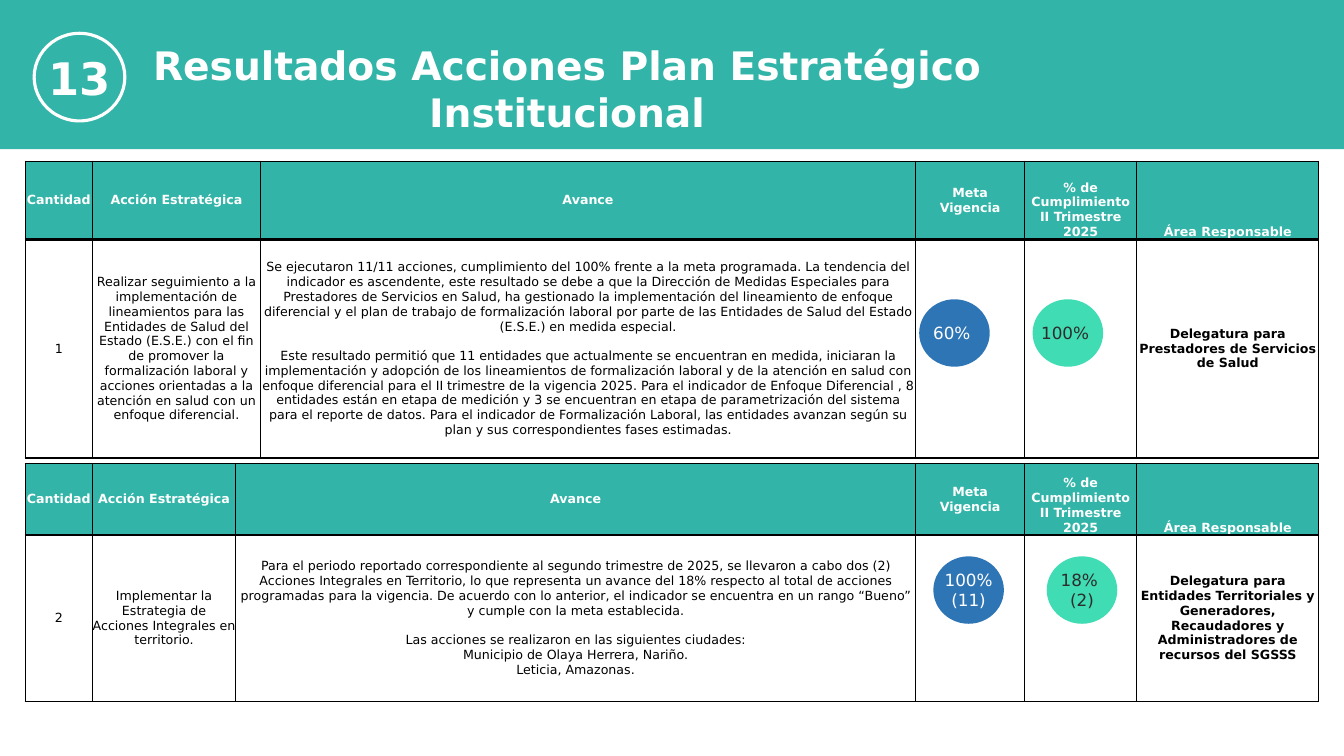
from dataclasses import dataclass

from lxml import etree
from pptx import Presentation
from pptx.dml.color import RGBColor
from pptx.enum.shapes import MSO_SHAPE
from pptx.enum.text import MSO_ANCHOR, MSO_AUTO_SIZE, PP_ALIGN
from pptx.oxml.ns import qn
from pptx.util import Pt

OVAL, RECTANGLE = MSO_SHAPE.OVAL, MSO_SHAPE.RECTANGLE
TOP, MIDDLE, BOTTOM = MSO_ANCHOR.TOP, MSO_ANCHOR.MIDDLE, MSO_ANCHOR.BOTTOM
CENTER = PP_ALIGN.CENTER
NO_AUTOFIT = MSO_AUTO_SIZE.NONE
TITLE_ONLY_LAYOUT = 5


@dataclass(frozen=True)
class Theme:
    """Colours, font and type sizes of the slide."""
    teal: str = "32B4A8"
    blue: str = "2E75B6"
    mint: str = "40DCB3"
    white: str = "FFFFFF"
    black: str = "000000"
    charcoal: str = "2D2D2D"
    font: str = "DejaVu Sans"
    title_size: float = 28
    badge_size: float = 32
    circle_size: float = 12
    table_size: float = 9
    table_gap: float = 10.5


THEME = Theme()

HEADINGS = [
    ("Cantidad", MIDDLE),
    ("Acción Estratégica", MIDDLE),
    ("Avance", MIDDLE),
    ("Meta\nVigencia", MIDDLE),
    ("% de Cumplimiento II Trimestre 2025", BOTTOM),
    ("Área Responsable", BOTTOM),
]

ACTIONS = [
    {
        "box": (18, 115.2, 924, 212),
        "header_height": 56,
        "columns": (48, 120, 468, 78, 80, 130),
        "cells": (
            "1",
            "Realizar seguimiento a la implementación de lineamientos para las Entidades de Salud "
            "del Estado (E.S.E.) con el fin de promover la formalización laboral y acciones "
            "orientadas a la atención en salud con un enfoque diferencial.",
            "\n\n".join((
                "Se ejecutaron 11/11 acciones, cumplimiento del 100% frente a la meta programada. "
                "La tendencia del indicador es ascendente, este resultado se debe a que la "
                "Dirección de Medidas Especiales para Prestadores de Servicios en Salud, ha "
                "gestionado la implementación del lineamiento de enfoque diferencial y el plan de "
                "trabajo de formalización laboral por parte de las Entidades de Salud del Estado "
                "(E.S.E.) en medida especial.",
                "Este resultado permitió que 11 entidades que actualmente se encuentran en medida, "
                "iniciaran la implementación y adopción de los lineamientos de formalización "
                "laboral y de la atención en salud con enfoque diferencial para el II trimestre "
                "de la vigencia 2025. Para el indicador de Enfoque Diferencial , 8 entidades están "
                "en etapa de medición y 3 se encuentran en etapa de parametrización del sistema "
                "para el reporte de datos. Para el indicador de Formalización Laboral, las "
                "entidades avanzan según su plan y sus correspondientes fases estimadas.",
            )),
            "",
            "",
            "Delegatura para Prestadores de Servicios de Salud",
        ),
        "circles_offset": (638.6, 98.6),
        "goal": "60% ",
        "result": "100% ",
    },
    {
        "box": (18, 331.2, 924, 170),
        "header_height": 51,
        "columns": (48, 102.3, 485.7, 78, 80, 130),
        "cells": (
            "2",
            "Implementar la Estrategia de Acciones Integrales en territorio.",
            "Para el periodo reportado correspondiente al segundo trimestre de 2025, se llevaron a "
            "cabo dos (2) Acciones Integrales en Territorio, lo que representa un avance del 18% "
            "respecto al total de acciones programadas para la vigencia. De acuerdo con lo "
            "anterior, el indicador se encuentra en un rango “Bueno” y cumple con la meta "
            "establecida.\n\n"
            "Las acciones se realizaron en las siguientes ciudades:\n"
            "Municipio de Olaya Herrera, Nariño.\n"
            "Leticia, Amazonas.",
            "",
            "",
            "Delegatura para Entidades Territoriales y Generadores, Recaudadores y "
            "Administradores de recursos del SGSSS",
        ),
        "circles_offset": (648.7, 66.2),
        "goal": "100%\n(11)",
        "result": "18% \n(2)",
    },
]


def write_text(frame, text, *, size, color, bold=False, gap=0):
    """Write centred lines; an empty line in the text becomes a gap before the next one."""
    after_gap = False
    paragraph = None
    for line in text.split("\n"):
        if not line:
            after_gap = True
            continue
        paragraph = frame.paragraphs[0] if paragraph is None else frame.add_paragraph()
        paragraph.alignment = CENTER
        if after_gap:
            paragraph.space_before = Pt(gap)
            after_gap = False
        run = paragraph.add_run()
        run.text = line
        run.font.name = THEME.font
        run.font.size = Pt(size)
        run.font.bold = bold
        run.font.color.rgb = RGBColor.from_string(color)


def add_plain_shape(slide, kind, box, fill=None):
    """Add a preset shape without shadow or line, filled only when a colour is given."""
    shape = slide.shapes.add_shape(kind, *map(Pt, box))
    shape.shadow.inherit = False
    shape.line.fill.background()
    if fill:
        shape.fill.solid()
        shape.fill.fore_color.rgb = RGBColor.from_string(fill)
    else:
        shape.fill.background()
    return shape


def add_circle(slide, box, text, *, fill=None, size, color, bold=False):
    """Add an ellipse with text in its middle."""
    circle = add_plain_shape(slide, OVAL, box, fill)
    frame = circle.text_frame
    frame.word_wrap = False
    frame.vertical_anchor = MIDDLE
    frame.margin_left = frame.margin_right = frame.margin_top = frame.margin_bottom = 0
    write_text(frame, text, size=size, color=color, bold=bold)
    return circle


def add_header(slide, box, number, text):
    """Place the coloured band, the title and the numbered badge."""
    left, top, width, height = box
    band = add_plain_shape(slide, RECTANGLE, box, THEME.teal)
    title = slide.shapes.title
    title._element.addprevious(band._element)
    title.left, title.top = Pt(left + 72), Pt(top + 26)
    title.width, title.height = Pt(666), Pt(75)
    frame = title.text_frame
    frame.word_wrap = True
    frame.auto_size = NO_AUTOFIT
    frame.vertical_anchor = TOP
    write_text(frame, text, size=THEME.title_size, color=THEME.white, bold=True)
    badge = add_circle(slide, (left + 24.4, top + 23.8, 64.8, 62.6), number,
                       size=THEME.badge_size, color=THEME.white, bold=True)
    badge.line.color.rgb = RGBColor.from_string(THEME.white)
    badge.line.width = Pt(2.25)


def set_borders(cell, bottom_width):
    """Give a cell black borders, one point wide except at the bottom."""
    properties = cell._tc.get_or_add_tcPr()
    for side, width in (("L", 1), ("R", 1), ("T", 1), ("B", bottom_width)):
        line = etree.SubElement(properties, qn(f"a:ln{side}"), w=str(Pt(width)))
        fill = etree.SubElement(line, qn("a:solidFill"))
        etree.SubElement(fill, qn("a:srgbClr"), val=THEME.black)


def fill_cell(cell, text, *, anchor=MIDDLE, header=False, bold=False):
    """Format a table cell and write its text."""
    set_borders(cell, 2 if header else 1)
    cell.margin_left = cell.margin_right = cell.margin_top = cell.margin_bottom = 0
    cell.vertical_anchor = anchor
    if header:
        cell.fill.solid()
        cell.fill.fore_color.rgb = RGBColor.from_string(THEME.teal)
    else:
        cell.fill.background()
    write_text(cell.text_frame, text, size=THEME.table_size, bold=bold, gap=THEME.table_gap,
               color=THEME.white if header else THEME.black)


def add_action(slide, action):
    """Place one action table with its goal and result circles."""
    left, top, width, height = action["box"]
    table = slide.shapes.add_table(2, len(HEADINGS), *map(Pt, action["box"])).table
    table.first_row = table.horz_banding = False
    table.rows[0].height = Pt(action["header_height"])
    table.rows[1].height = Pt(height - action["header_height"])
    last = len(HEADINGS) - 1
    for index, (heading, anchor) in enumerate(HEADINGS):
        table.columns[index].width = Pt(action["columns"][index])
        fill_cell(table.cell(0, index), heading, anchor=anchor, header=True, bold=True)
        fill_cell(table.cell(1, index), action["cells"][index], bold=index == last)

    offset_x, offset_y = action["circles_offset"]
    circles = ((action["goal"], THEME.blue, THEME.white),
               (action["result"], THEME.mint, THEME.charcoal))
    for index, (text, fill, color) in enumerate(circles):
        box = (left + offset_x + 81 * index, top + offset_y, 50.4, 48.2)
        add_circle(slide, box, text, fill=fill, size=THEME.circle_size, color=color)


def main():
    """Build the slide and save it."""
    presentation = Presentation()
    presentation.slide_width, presentation.slide_height = Pt(960), Pt(540)
    slide = presentation.slides.add_slide(presentation.slide_layouts[TITLE_ONLY_LAYOUT])
    add_header(slide, (0, 0, 960, 106.6), "13",
               "Resultados Acciones Plan Estratégico Institucional")
    for action in ACTIONS:
        add_action(slide, action)
    presentation.save("out.pptx")


if __name__ == "__main__":
    main()
